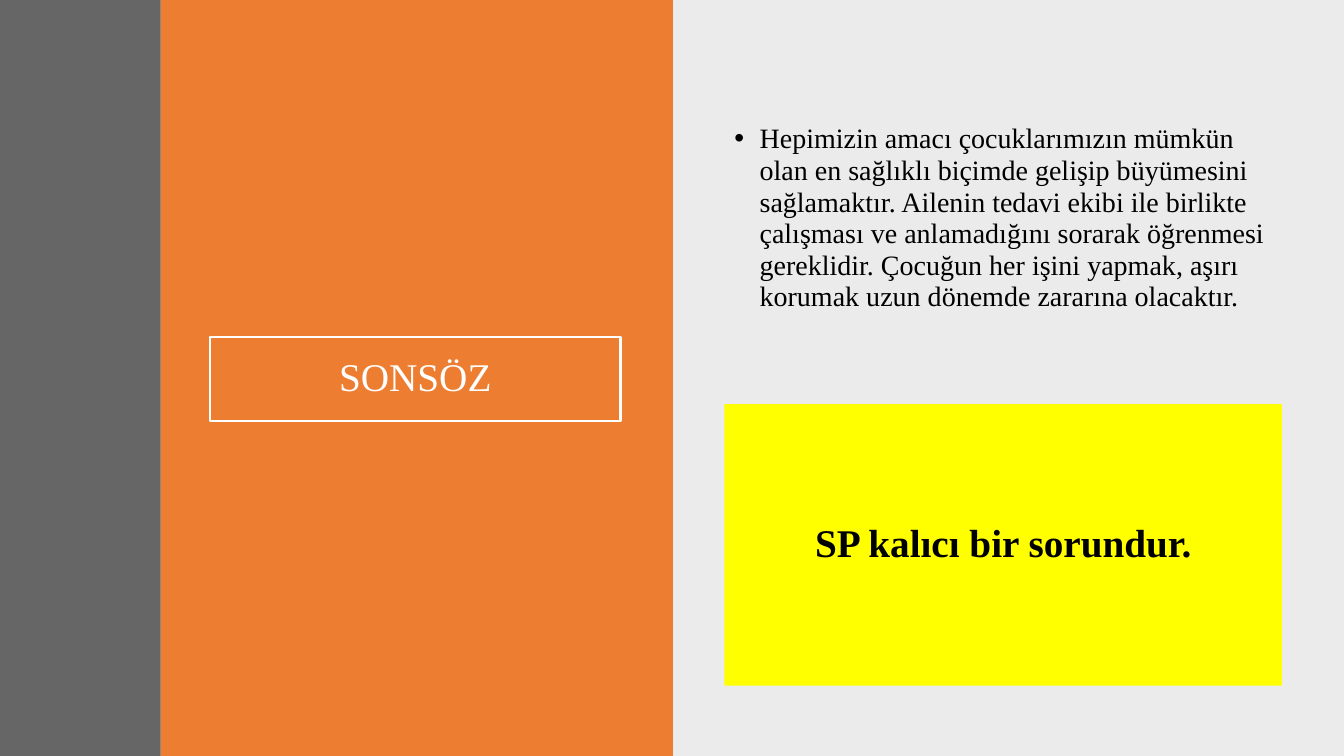
from lxml import etree
from pptx import Presentation
from pptx.dml.color import RGBColor
from pptx.enum.shapes import MSO_SHAPE as Shape
from pptx.enum.text import MSO_ANCHOR as Anchor, PP_ALIGN as Align
from pptx.oxml.ns import qn
from pptx.util import Emu, Pt

SCALE = 9525


def px(n):
    """Turn whole pixels into EMU."""
    return Emu(n * SCALE)


def paint(color, tone):
    """Set a colour format from a hex string."""
    color.rgb = RGBColor.from_string(tone)


class Deck:
    """Holds the text style and the current slide."""

    font = "Times New Roman"

    def __init__(self, wide, high):
        """Open a deck with one blank slide."""
        self.prs = Presentation()
        self.prs.slide_width, self.prs.slide_height = px(wide), px(high)
        self.slide = self.prs.slides.add_slide(self.prs.slide_layouts[6])

    def rect(self, x, y, w, h, fill=None, alpha=100, line=None):
        """Add a rectangle, filled or outlined."""
        box = self.slide.shapes.add_shape(Shape.RECTANGLE, px(x), px(y), px(w), px(h))
        box.shadow.inherit = False
        if fill:
            box.fill.solid()
            paint(box.fill.fore_color, fill)
            if alpha < 100:
                tone = box._element.spPr.find(".//" + qn("a:srgbClr"))
                etree.SubElement(tone, qn("a:alpha"), val=str(alpha * 1000))
        else:
            box.fill.background()
        if line:
            paint(box.line.color, line)
            box.line.width = Pt(2)
        else:
            box.line.fill.background()
        return box

    def label(self, box, text, size, tone, bold=False, align=Align.CENTER,
              anchor=Anchor.MIDDLE, gap=0.9):
        """Put one styled paragraph in a box."""
        frame = box.text_frame
        frame.word_wrap = True
        frame.vertical_anchor = anchor
        para = frame.paragraphs[0]
        para.text = text
        para.alignment = align
        para.line_spacing = gap
        para.font.name, para.font.size, para.font.bold = self.font, Pt(size), bold
        paint(para.font.color, tone)

    def bullet(self, x, y, w, h, text, size, tone):
        """Add a text box with one bulleted paragraph."""
        box = self.slide.shapes.add_textbox(px(x), px(y), px(w), px(h))
        props = box.text_frame.paragraphs[0]._p.get_or_add_pPr()
        props.set("marL", str(px(24)))
        props.set("indent", str(px(-24)))
        etree.SubElement(props, qn("a:buFont"), typeface="Arial")
        etree.SubElement(props, qn("a:buChar"), char="•")
        self.label(box, text, size, tone, align=Align.LEFT, anchor=Anchor.TOP, gap=0.94)


def main():
    """Build the closing slide."""
    deck = Deck(1280, 720)
    deck.rect(640, 0, 640, 720, "000000", alpha=8)
    deck.rect(153, 0, 488, 720, "ED7D31")
    title = deck.rect(200, 321, 391, 80, line="FFFFFF")
    deck.label(title, "SONSÖZ", 28, "FFFFFF")
    deck.rect(0, 0, 153, 720, "404040", alpha=80)
    deck.bullet(
        690, 113, 531, 222,
        "Hepimizin amacı çocuklarımızın mümkün olan en sağlıklı biçimde gelişip "
        "büyümesini sağlamaktır. Ailenin tedavi ekibi ile birlikte çalışması ve "
        "anlamadığını sorarak öğrenmesi gereklidir. Çocuğun her işini yapmak, aşırı "
        "korumak uzun dönemde zararına olacaktır.",
        20, "000000")
    note = deck.rect(690, 385, 531, 268, "FFFF00")
    deck.label(note, "SP kalıcı bir sorundur.", 28, "000000", bold=True)
    deck.prs.save("out.pptx")


if __name__ == "__main__":
    main()
